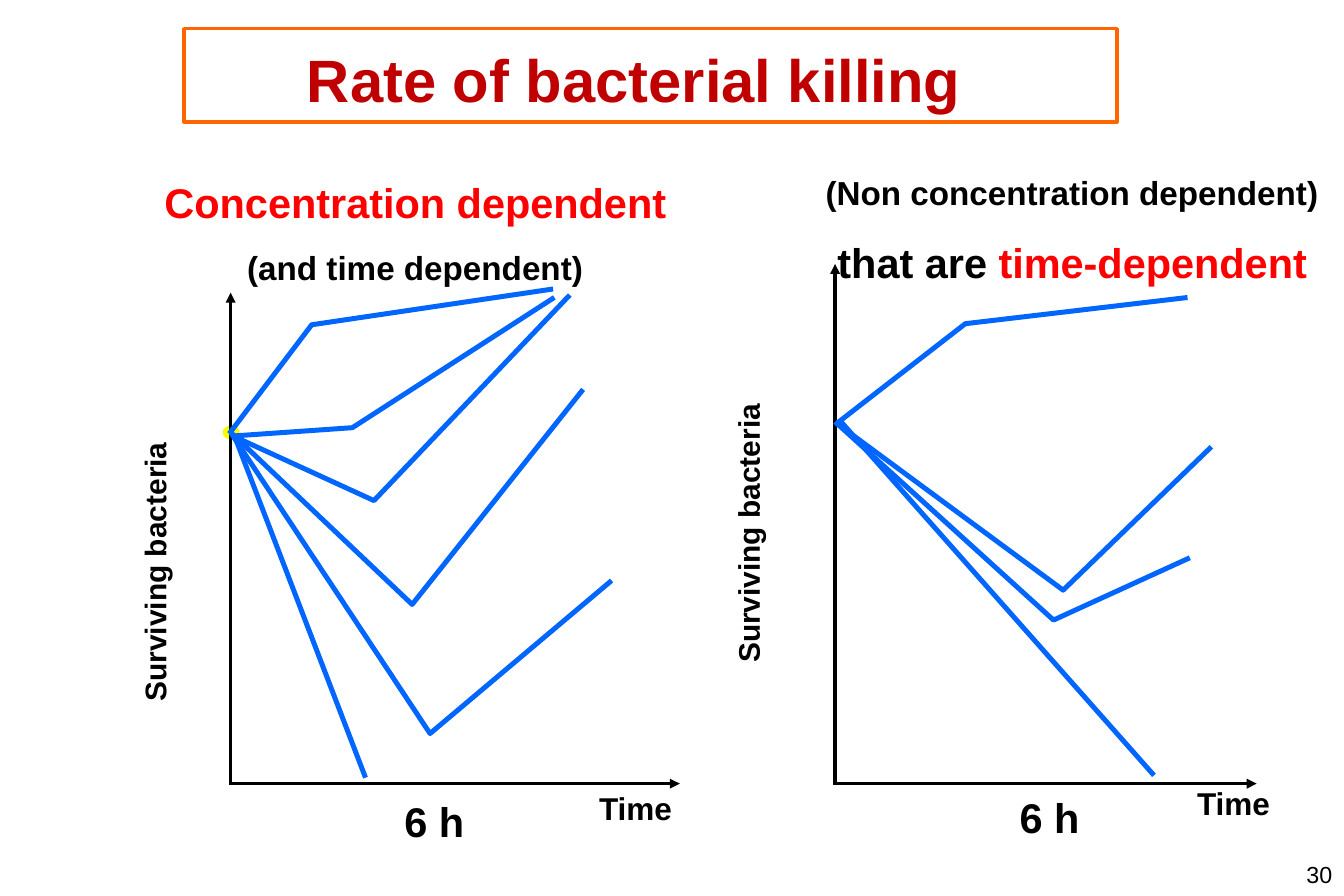
from dataclasses import dataclass

import pptx
import pptx.dml.color
import pptx.enum.shapes
import pptx.enum.text
import pptx.oxml
import pptx.oxml.ns
import pptx.shapes.connector
import pptx.slide
import pptx.util
from pptx.dml.color import RGBColor
from pptx.enum.text import MSO_ANCHOR, PP_ALIGN
from pptx.util import Pt

BLACK = RGBColor(0x00, 0x00, 0x00)
RED = RGBColor(0xFF, 0x00, 0x00)
DARK_RED = RGBColor(0xC0, 0x00, 0x00)
ORANGE = RGBColor(0xFF, 0x66, 0x00)
BLUE = RGBColor(0x00, 0x66, 0xFF)
YELLOW = RGBColor(0xFA, 0xFD, 0x00)

Point = tuple[float, float]
Box = tuple[float, float, float, float]
Insets = tuple[float, float, float, float]
LABEL_INSETS: Insets = (5, 2.2, 5, 2.2)


@dataclass(frozen=True)
class Line:
    runs: tuple[tuple[str, RGBColor], ...]
    size: float
    spacing: float
    align: PP_ALIGN = PP_ALIGN.CENTER
    bold: bool = True


@dataclass(frozen=True)
class Label:
    box: Box
    lines: tuple[Line, ...]
    wrap: bool = False
    rotation: float = 0
    insets: Insets = LABEL_INSETS
    grow: bool = True


@dataclass(frozen=True)
class Graph:
    axes: tuple[tuple[Point, Point], ...]
    straight: tuple[Point, Point]
    curves: tuple[tuple[Point, Point, Point], ...]
    labels: tuple[Label, ...]


SURVIVING = (("Surviving bacteria", BLACK),)
TIME = Line((("Time", BLACK),), 19, 1.2)
SIX_HOURS = Line((("6 h", BLACK),), 25, 1.22)

CONCENTRATION_GRAPH = Graph(
    axes=(((139, 472.3), (139, 176.4)), ((138.2, 472.3), (409.7, 472.3))),
    straight=((141.1, 262.1), (220.3, 468.7)),
    curves=(
        ((138.2, 261.4), (187.9, 195.8), (333.4, 174.2)),
        ((140.4, 262.8), (212.4, 257.8), (334.1, 179.3)),
        ((140.4, 262.8), (225.4, 301.7), (343.4, 177.8)),
        ((139, 260.6), (248.4, 364.3), (351.4, 234.7)),
        ((139, 260.6), (259.2, 442.1), (368.6, 349.9)),
    ),
    labels=(
        Label((-7.2, 314.6, 196.6, 29.5),
              (Line(SURVIVING, 18, 1.17, PP_ALIGN.LEFT),), True, 270),
        Label((355.7, 468.7, 54.7, 31.7), (TIME,)),
        Label((238.3, 470.9, 46.8, 41), (SIX_HOURS,)),
        Label((92.2, 109.4, 316.1, 66.2), (
            Line((("Concentration dependent", RED),), 25, 0.85),
            Line((("(and time dependent)", BLACK),), 20, 1.5))),
    ),
)

TIME_GRAPH = Graph(
    axes=(((503.3, 473), (503.3, 159.1)), ((504.7, 472.3), (757.4, 472.3))),
    straight=((506.2, 253.4), (695.5, 467.3)),
    curves=(
        ((504.7, 254.9), (581.8, 195.1), (715.7, 179.3)),
        ((504, 254.9), (640.8, 355.7), (730.1, 269.3)),
        ((503.3, 254.2), (635, 373.7), (717.1, 336.2)),
    ),
    labels=(
        Label((331.2, 306.7, 235.4, 29.5), (Line(SURVIVING, 18, 1.17),), True, 270),
        Label((709.2, 465.8, 68.4, 31.7), (TIME,), True),
        Label((609.1, 468.7, 46.8, 41), (SIX_HOURS,)),
        Label((491, 105.1, 310.3, 70.6), (
            Line((("(Non concentration dependent)", BLACK),), 20, 0.85),
            Line((("that are ", BLACK), ("time-dependent", RED)), 25, 1.5))),
    ),
)

TITLE = Label((110.9, 17.3, 562.3, 56.2),
              (Line((("Rate of bacterial killing", DARK_RED),), 36, 1.1),),
              True, insets=(9, 5.8, 29, 5.8))
SLIDE_NUMBER = Label((600.5, 514.8, 209.5, 25.2),
                     (Line((("30", BLACK),), 14, 1, PP_ALIGN.RIGHT, False),),
                     True, insets=(7.2, 3.6, 7.2, 3.6), grow=False)


def add_label(slide: pptx.slide.Slide, label: Label):
    shape = slide.shapes.add_textbox(*map(Pt, label.box))
    shape.rotation = label.rotation
    frame = shape.text_frame
    frame.word_wrap = label.wrap
    if label.grow:
        frame.auto_size = pptx.enum.text.MSO_AUTO_SIZE.SHAPE_TO_FIT_TEXT
    (frame.margin_left, frame.margin_top,
     frame.margin_right, frame.margin_bottom) = map(Pt, label.insets)
    for index, line in enumerate(label.lines):
        paragraph = frame.add_paragraph() if index else frame.paragraphs[0]
        paragraph.alignment = line.align
        paragraph.line_spacing = line.spacing
        font = paragraph.font
        font.name, font.size, font.bold = "Arial", Pt(line.size), line.bold
        if len(line.runs) == 1:
            font.color.rgb = line.runs[0][1]
        for text, color in line.runs:
            run = paragraph.add_run()
            run.text = text
            if len(line.runs) > 1:
                run.font.color.rgb = color
    return shape


def add_line(slide: pptx.slide.Slide, start: Point, end: Point, color: RGBColor,
             width: float) -> pptx.shapes.connector.Connector:
    connector = slide.shapes.add_connector(
        pptx.enum.shapes.MSO_CONNECTOR.STRAIGHT, *map(Pt, start + end))
    connector.line.color.rgb = color
    connector.line.width = Pt(width)
    properties = connector._element.spPr
    properties.append(properties.makeelement(pptx.oxml.ns.qn("a:effectLst"), {}))
    return connector


def add_axis(slide: pptx.slide.Slide, start: Point, end: Point) -> None:
    line = add_line(slide, start, end, BLACK, 2).line._get_or_add_ln()
    line.append(line.makeelement(pptx.oxml.ns.qn("a:tailEnd"), {"type": "triangle"}))


def add_curve(slide: pptx.slide.Slide, points: tuple[Point, ...]) -> None:
    start, *rest = [(Pt(x), Pt(y)) for x, y in points]
    builder = slide.shapes.build_freeform(*start)
    builder.add_line_segments(rest, close=False)
    shape = builder.convert_to_shape()
    shape.shadow.inherit = False
    shape.fill.background()
    shape.line.color.rgb = BLUE
    shape.line.width = Pt(3)


def add_starting_dot(slide: pptx.slide.Slide) -> None:
    dot = slide.shapes.add_shape(
        pptx.enum.shapes.MSO_SHAPE.OVAL, Pt(136.1), Pt(258.5), Pt(6.5), Pt(4.3))
    dot.shadow.inherit = False
    dot.fill.solid()
    dot.fill.fore_color.rgb = YELLOW
    dot.line.color.rgb = YELLOW
    dot.line.width = Pt(4)


def add_graph(slide: pptx.slide.Slide, graph: Graph) -> None:
    for start, end in graph.axes:
        add_axis(slide, start, end)
    add_line(slide, *graph.straight, BLUE, 3)
    for points in graph.curves:
        add_curve(slide, points)
    for label in graph.labels:
        add_label(slide, label)


def main() -> None:
    presentation = pptx.Presentation()
    presentation.slide_width, presentation.slide_height = Pt(810), Pt(540)
    slide = presentation.slides.add_slide(presentation.slide_layouts[6])
    add_starting_dot(slide)
    add_graph(slide, TIME_GRAPH)
    add_graph(slide, CONCENTRATION_GRAPH)
    title = add_label(slide, TITLE)
    title.text_frame.vertical_anchor = MSO_ANCHOR.MIDDLE
    title.line.color.rgb = ORANGE
    title.line.width = Pt(2)
    add_label(slide, SLIDE_NUMBER)
    presentation.save("out.pptx")


if __name__ == "__main__":
    main()
